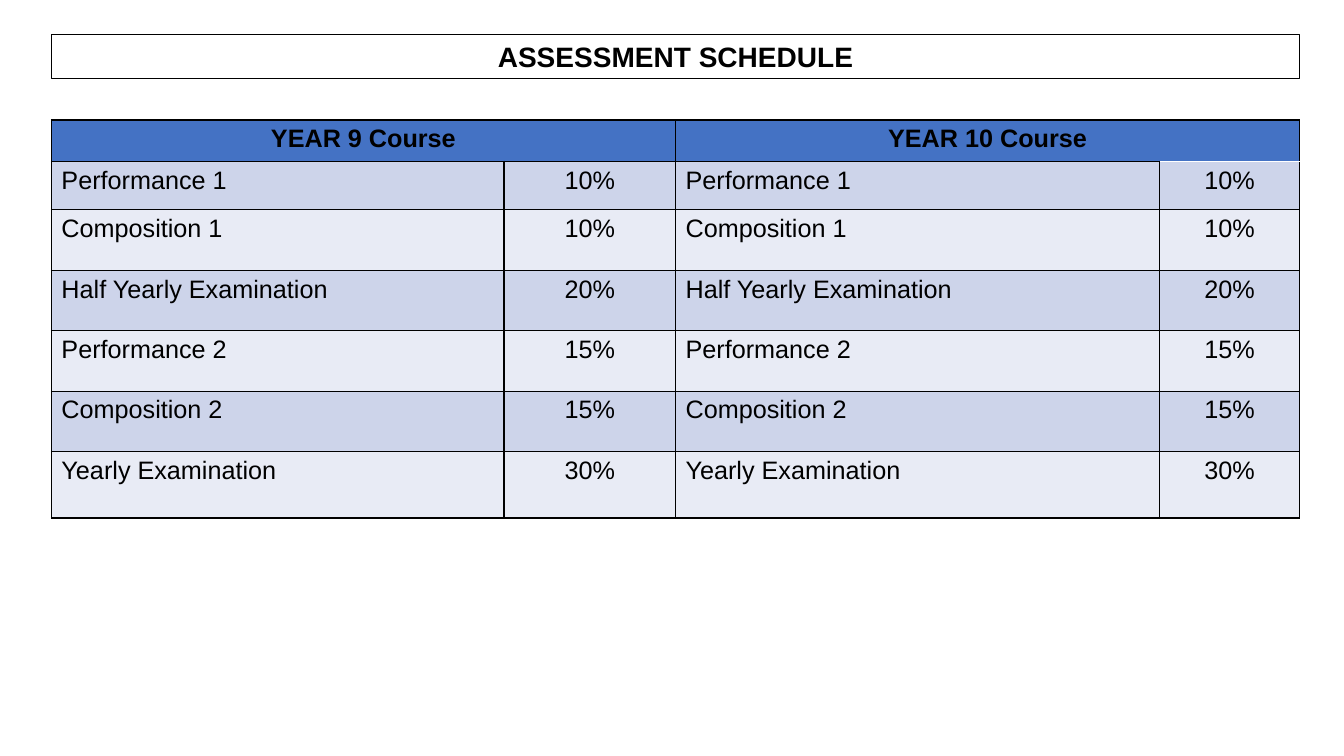
from dataclasses import dataclass

from lxml import etree
from pptx import Presentation
from pptx.dml.color import RGBColor
from pptx.enum.shapes import MSO_SHAPE
from pptx.enum.text import MSO_ANCHOR, PP_ALIGN
from pptx.oxml.ns import qn
from pptx.slide import Slide
from pptx.table import Table, _Cell
from pptx.text.text import TextFrame
from pptx.util import Inches, Pt

CENTER, LEFT = PP_ALIGN.CENTER, PP_ALIGN.LEFT
RECTANGLE = MSO_SHAPE.RECTANGLE
MIDDLE = MSO_ANCHOR.MIDDLE
FONT = "Arial"
BLANK_LAYOUT = 6
COLOURS = {
    "ink": "000000",
    "white": "FFFFFF",
    "header": "4472C4",
    "odd": "CDD4EA",
    "even": "E8EBF5",
}
MARGIN_LEFT = 0.51
COLUMN_WIDTHS = (4.49, 1.7, 4.8, 1.39)
ROW_HEIGHTS = (0.41, 0.48, 0.6, 0.6, 0.6, 0.6, 0.66)
COURSES = ("YEAR 9 Course", "YEAR 10 Course")


@dataclass(frozen=True)
class Task:
    name: str
    weight: str


TASKS = (
    Task("Performance 1", "10%"),
    Task("Composition 1", "10%"),
    Task("Half Yearly Examination", "20%"),
    Task("Performance 2", "15%"),
    Task("Composition 2", "15%"),
    Task("Yearly Examination", "30%"),
)


def colour(name: str) -> RGBColor:
    return RGBColor.from_string(COLOURS[name])


def write_text(frame: TextFrame, text: str, size: int, bold: bool, alignment: PP_ALIGN) -> None:
    paragraph = frame.paragraphs[0]
    paragraph.alignment = alignment
    run = paragraph.add_run()
    run.text = text
    run.font.name = FONT
    run.font.size = Pt(size)
    run.font.bold = bold
    run.font.color.rgb = colour("ink")


def set_borders(cell: _Cell, top: str = "ink", bottom: str = "ink") -> None:
    properties = cell._tc.get_or_add_tcPr()
    sides = {"a:lnL": "ink", "a:lnR": "ink", "a:lnT": top, "a:lnB": bottom}
    # Border lines come before the fill
    for position, (tag, name) in enumerate(sides.items()):
        line = etree.Element(qn(tag), w=str(Pt(1)))
        fill = etree.SubElement(line, qn("a:solidFill"))
        etree.SubElement(fill, qn("a:srgbClr"), val=COLOURS[name])
        properties.insert(position, line)


def style_cell(cell: _Cell, fill: str, top: str = "ink", bottom: str = "ink") -> None:
    cell.fill.solid()
    cell.fill.fore_color.rgb = colour(fill)
    set_borders(cell, top, bottom)


def add_title(slide: Slide) -> None:
    shape = slide.shapes.add_shape(
        RECTANGLE, Inches(MARGIN_LEFT), Inches(0.34), Inches(sum(COLUMN_WIDTHS)), Inches(0.44)
    )
    shape.shadow.inherit = False
    shape.fill.background()
    shape.line.color.rgb = colour("ink")
    shape.line.width = Pt(0.75)
    shape.text_frame.word_wrap = True
    shape.text_frame.vertical_anchor = MIDDLE
    write_text(shape.text_frame, "ASSESSMENT SCHEDULE", 20, True, CENTER)


def fill_course(table: Table, index: int, course: str) -> None:
    name_column, weight_column = 2 * index, 2 * index + 1
    # The last weight column has a white rule under the header
    rule = "white" if index == len(COURSES) - 1 else "ink"

    header = table.cell(0, name_column)
    header_end = table.cell(0, weight_column)
    style_cell(header, "header")
    style_cell(header_end, "header", bottom=rule)
    header.merge(header_end)
    write_text(header.text_frame, course, 18, True, CENTER)

    for row, task in enumerate(TASKS, start=1):
        band = "odd" if row % 2 else "even"
        name_cell, weight_cell = table.cell(row, name_column), table.cell(row, weight_column)
        style_cell(name_cell, band)
        style_cell(weight_cell, band, top=rule if row == 1 else "ink")
        write_text(name_cell.text_frame, task.name, 18, False, LEFT)
        write_text(weight_cell.text_frame, task.weight, 18, False, CENTER)


def add_schedule(slide: Slide) -> None:
    table = slide.shapes.add_table(
        len(ROW_HEIGHTS), len(COLUMN_WIDTHS), Inches(MARGIN_LEFT), Inches(1.19),
        Inches(sum(COLUMN_WIDTHS)), Inches(sum(ROW_HEIGHTS)),
    ).table
    for column, width in zip(table.columns, COLUMN_WIDTHS):
        column.width = Inches(width)
    for row, height in zip(table.rows, ROW_HEIGHTS):
        row.height = Inches(height)
    for index, course in enumerate(COURSES):
        fill_course(table, index, course)


def main() -> None:
    presentation = Presentation()
    presentation.slide_width = Inches(13.33)
    presentation.slide_height = Inches(7.5)
    slide = presentation.slides.add_slide(presentation.slide_layouts[BLANK_LAYOUT])
    add_schedule(slide)
    add_title(slide)
    presentation.save("out.pptx")


if __name__ == "__main__":
    main()
